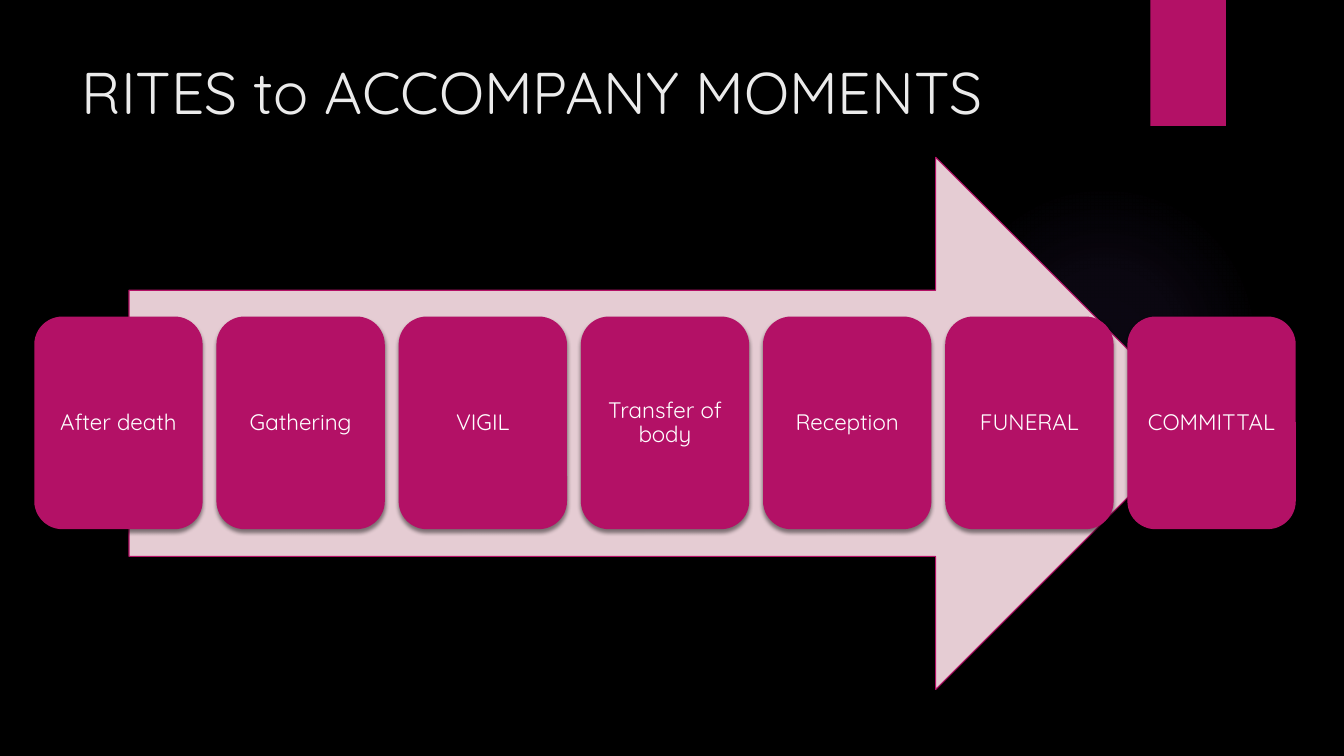
import pptx
import pptx.util
import pptx.oxml
import pptx.oxml.ns
import pptx.dml.color
import pptx.enum.shapes
import pptx.enum.text

Inches = pptx.util.Inches
SHAPES = pptx.enum.shapes.MSO_SHAPE
ALIGN = pptx.enum.text.PP_ALIGN
ANCHOR = pptx.enum.text.MSO_ANCHOR
MAGENTA = "B31166"
NAMESPACE = pptx.oxml.ns.nsdecls("a")


def paint(shape, fill, line=None, shadow=False):
    """Give a shape its fill, outline and optional soft drop shadow."""
    shape.fill.solid()
    shape.fill.fore_color.rgb = pptx.dml.color.RGBColor.from_string(fill)
    if line:
        shape.line.color.rgb = pptx.dml.color.RGBColor.from_string(line)
        shape.line.width = pptx.util.Pt(0.75)
    else:
        shape.line.fill.background()
    shape.shadow.inherit = False
    if shadow:
        effects = shape._element.spPr.find(pptx.oxml.ns.qn("a:effectLst"))
        effects.append(pptx.oxml.parse_xml(
            f'<a:outerShdw {NAMESPACE} blurRad="38100" dist="25400" dir="5400000" '
            'rotWithShape="0"><a:srgbClr val="000000"><a:alpha val="45000"/>'
            '</a:srgbClr></a:outerShdw>'))


def write(shape, text, size, color, align, anchor, inset=(0.1, 0.05), spacing=1.0):
    """Put one formatted paragraph into a shape."""
    frame = shape.text_frame
    frame.word_wrap = True
    frame.auto_size = pptx.enum.text.MSO_AUTO_SIZE.NONE
    frame.vertical_anchor = anchor
    frame.margin_left = frame.margin_right = Inches(inset[0])
    frame.margin_top = frame.margin_bottom = Inches(inset[1])
    paragraph = frame.paragraphs[0]
    paragraph.alignment = align
    paragraph.line_spacing = spacing
    paragraph.space_before = pptx.util.Pt(0)
    run = paragraph.add_run()
    run.text = text
    run.font.size = pptx.util.Pt(size)
    run.font.name = "Quicksand"
    run.font.color.rgb = pptx.dml.color.RGBColor.from_string(color)


presentation = pptx.Presentation()
presentation.slide_width = Inches(13.33)
presentation.slide_height = Inches(7.5)
slide = presentation.slides.add_slide(presentation.slide_layouts[5])
background = slide.background.fill
background.solid()
background.fore_color.rgb = pptx.dml.color.RGBColor.from_string("000000")

# Faint violet glow
glow = slide.shapes.add_shape(
    SHAPES.OVAL, Inches(9.41), Inches(1.83), Inches(3.08), Inches(3.08))
paint(glow, "9B6BF2")
stops = "".join(
    f'<a:gs pos="{position * 1000}"><a:srgbClr val="9B6BF2">'
    f'<a:alpha val="{alpha * 1000}"/></a:srgbClr></a:gs>'
    for position, alpha in [(0, 7), (36, 6), (69, 0), (100, 0)])
solid = glow._element.spPr.find(pptx.oxml.ns.qn("a:solidFill"))
solid.getparent().replace(solid, pptx.oxml.parse_xml(
    f'<a:gradFill {NAMESPACE}><a:gsLst>{stops}</a:gsLst><a:path path="circle">'
    '<a:fillToRect l="50000" t="50000" r="50000" b="50000"/></a:path></a:gradFill>'))

# Corner tab
tab = slide.shapes.add_shape(
    SHAPES.RECTANGLE, Inches(11.41), 0, Inches(0.75), Inches(1.25))
paint(tab, MAGENTA, shadow=True)

# Title
title = slide.shapes.title
title.left, title.top = Inches(0.71), Inches(0.5)
title.width, title.height = Inches(10.29), Inches(1.53)
write(title, "RITES to ACCOMPANY MOMENTS", size=42, color="EBEBEB",
      align=ALIGN.LEFT, anchor=ANCHOR.TOP)

# Arrow behind the rites
arrow = slide.shapes.add_shape(
    SHAPES.RIGHT_ARROW, Inches(1.28), Inches(1.56), Inches(10.64), Inches(5.28))
paint(arrow, "E5CCD3", line=MAGENTA)

# Rites in order
rites = ["After death", "Gathering", "VIGIL", "Transfer of body",
         "Reception", "FUNERAL", "COMMITTAL"]
first_left, step = 0.34, 1.807
for index, name in enumerate(rites):
    rite = slide.shapes.add_shape(
        SHAPES.ROUNDED_RECTANGLE, Inches(first_left + index * step), Inches(3.14),
        Inches(1.67), Inches(2.11))
    paint(rite, MAGENTA, shadow=True)
    write(rite, name, size=16, color="FFFFFF", align=ALIGN.CENTER,
          anchor=ANCHOR.MIDDLE, inset=(0.07, 0.07), spacing=0.9)

presentation.save("out.pptx")
